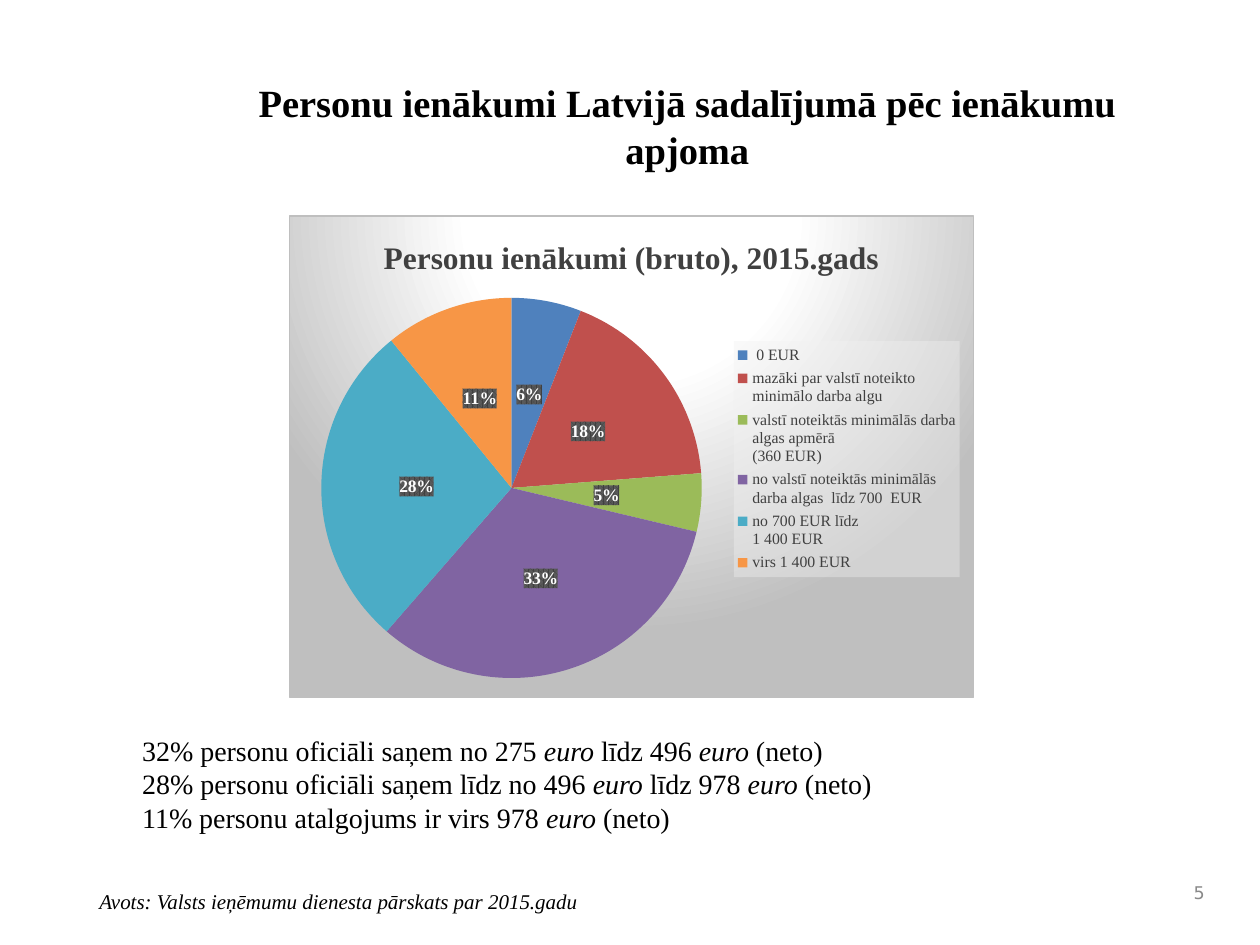
from dataclasses import dataclass

import pptx
import pptx.chart.data
import pptx.dml.color
import pptx.enum.chart
import pptx.enum.text
import pptx.oxml
import pptx.oxml.ns
import pptx.util

Inches = pptx.util.Inches
Align = pptx.enum.text.PP_ALIGN
Anchor = pptx.enum.text.MSO_ANCHOR
NS = pptx.oxml.ns.nsdecls("a", "c")


@dataclass
class Theme:
    font: str = "Times New Roman"
    plain: str = "DejaVu Sans"
    ink: str = "000000"
    white: str = "FFFFFF"
    soft: str = "404040"
    mid: str = "595959"
    grey: str = "BFBFBF"
    pale: str = "F2F2F2"
    num: str = "898989"
    slices: tuple = ("4F81BD", "C0504D", "9BBB59", "8064A2", "4BACC6", "F79646")
    head: int = 22
    sub: int = 18
    body: int = 16
    note: int = 12
    small: int = 10
    key: int = 9


T = Theme()

DATA = [
    (" 0 EUR", 6),
    ("mazāki par valstī noteikto minimālo darba algu", 18),
    ("valstī noteiktās minimālās darba algas apmērā\n(360 EUR)", 5),
    ("no valstī noteiktās minimālās darba algas  līdz 700  EUR", 33),
    ("no 700 EUR līdz \n1 400 EUR", 28),
    ("virs 1 400 EUR", 11),
]
# Every second piece of a line is italic
FACTS = [
    ("32% personu oficiāli saņem no 275 ", "euro", " līdz 496 ", "euro", " (neto)"),
    ("28% personu oficiāli saņem līdz no 496 ", "euro", " līdz 978 ", "euro", " (neto)"),
    ("11% personu atalgojums ir virs 978 ", "euro", " (neto)"),
]


def style(font, size, color=T.ink, name=T.font, bold=False, italic=False):
    font.name, font.size = name, pptx.util.Pt(size)
    font.bold, font.italic = bold, italic
    font.color.rgb = pptx.dml.color.RGBColor.from_string(color)


def write(shape, lines, size, align=Align.LEFT, anchor=Anchor.TOP, italic=False, **look):
    """Fill a shape with lines, each a tuple of alternating upright and italic pieces."""
    frame = shape.text_frame
    frame.word_wrap, frame.vertical_anchor = True, anchor
    frame.auto_size = pptx.enum.text.MSO_AUTO_SIZE.NONE
    for i, line in enumerate(lines):
        para = frame.paragraphs[0] if i == 0 else frame.add_paragraph()
        para.alignment = align
        for j, piece in enumerate(line):
            run = para.add_run()
            run.text = piece
            style(run.font, size, italic=italic or j % 2 == 1, **look)


def place(slide, box, lines, size, **look):
    write(slide.shapes.add_textbox(*map(Inches, box)), lines, size, **look)


def title(slide, box, text):
    shape = slide.shapes.title
    shape.left, shape.top, shape.width, shape.height = map(Inches, box)
    write(shape, [(text,)], T.head, align=Align.CENTER, bold=True)


def paint(after, fill, line="<a:ln><a:noFill/></a:ln>"):
    """Add shape properties right after a chart element."""
    after.addnext(pptx.oxml.parse_xml(f"<c:spPr {NS}>{fill}{line}</c:spPr>"))


def layout(host, index, x, y, w, h, inner=False):
    """Set a manual layout as fractions of the chart."""
    for old in host.findall(pptx.oxml.ns.qn("c:layout")):
        host.remove(old)
    target = '<c:layoutTarget val="inner"/>' if inner else ""
    modes = '<c:xMode val="edge"/><c:yMode val="edge"/>'
    spots = "".join(f'<c:{k} val="{v}"/>' for k, v in zip("xywh", (x, y, w, h)))
    host.insert(index, pptx.oxml.parse_xml(
        f"<c:layout {NS}><c:manualLayout>{target}{modes}{spots}"
        "</c:manualLayout></c:layout>"))


def rgb(color, inner=""):
    return f'<a:srgbClr val="{color}">{inner}</a:srgbClr>'


def pie(slide, box, text):
    data = pptx.chart.data.CategoryChartData(number_format="0")
    data.categories = [name for name, _ in DATA]
    data.add_series("Series 1", [value for _, value in DATA])
    chart = slide.shapes.add_chart(
        pptx.enum.chart.XL_CHART_TYPE.PIE, *map(Inches, box), data).chart
    style(chart.font, T.small)
    qn = pptx.oxml.ns.qn

    # Heading
    chart.has_title = True
    run = chart.chart_title.text_frame.paragraphs[0].add_run()
    run.text = text
    style(run.font, T.sub, T.soft, bold=True)
    chart.chart_title.include_in_layout = False

    # Slices and percent labels
    plot = chart.plots[0]
    plot.vary_by_categories = True
    series = plot.series[0]
    for i, color in enumerate(T.slices):
        fill = series.points[i].format.fill
        fill.solid()
        fill.fore_color.rgb = pptx.dml.color.RGBColor.from_string(color)
    labels = series.data_labels
    labels.show_percentage, labels.show_value = True, False
    labels.number_format, labels.number_format_is_linked = "0%", False
    labels.position = pptx.enum.chart.XL_LABEL_POSITION.CENTER
    style(labels.font, T.small, T.white, bold=True)
    node = chart.element.find(f".//{qn('c:ser')}/{qn('c:dLbls')}")
    paint(node.find(qn("c:numFmt")),
          f'<a:pattFill prst="pct75"><a:fgClr>{rgb(T.soft)}</a:fgClr>'
          f"<a:bgClr>{rgb(T.mid)}</a:bgClr></a:pattFill>")
    layout(chart.element.find(f".//{qn('c:plotArea')}"), 0, 0.04, 0.17, 0.57, 0.79, True)

    # Legend
    chart.has_legend = True
    key = chart.legend
    key.position = pptx.enum.chart.XL_LEGEND_POSITION.RIGHT
    key.include_in_layout = False
    style(key.font, T.key, T.soft)
    node = chart.element.find(f".//{qn('c:legend')}")
    layout(node, 1, 0.65, 0.26, 0.33, 0.49)
    alpha = '<a:alpha val="39000"/>'
    paint(node.find(qn("c:overlay")), f"<a:solidFill>{rgb(T.pale, alpha)}</a:solidFill>")

    # Radial backdrop
    stops = "".join(f'<a:gs pos="{at * 1000}">{rgb(color)}</a:gs>'
                    for at, color in ((0, T.white), (39, T.white), (100, T.grey)))
    paint(chart.element.find(qn("c:chart")),
          f'<a:gradFill><a:gsLst>{stops}</a:gsLst><a:path path="circle">'
          '<a:fillToRect l="50000" t="-80000" r="50000" b="180000"/></a:path></a:gradFill>',
          f'<a:ln w="9525"><a:solidFill>{rgb(T.grey)}</a:solidFill></a:ln>')


def main():
    deck = pptx.Presentation()
    deck.slide_width, deck.slide_height = Inches(10), Inches(7.5)
    slide = deck.slides.add_slide(deck.slide_layouts[5])
    title(slide, (1.72, 0.58, 7.47, 1.13),
          "Personu ienākumi Latvijā sadalījumā pēc ienākumu apjoma")
    pie(slide, (2.29, 1.71, 5.44, 3.83), "Personu ienākumi (bruto), 2015.gads")
    # Findings, source and page number
    place(slide, (1.03, 5.77, 7.95, 0.91), FACTS, T.body)
    place(slide, (0.69, 7, 8.27, 0.3),
          [("Avots: Valsts ieņēmumu dienesta pārskats par 2015.gadu",)], T.note, italic=True)
    place(slide, (9.19, 6.92, 0.47, 0.33), [("5",)], T.small, align=Align.RIGHT,
          anchor=Anchor.MIDDLE, color=T.num, name=T.plain)
    deck.save("out.pptx")


if __name__ == "__main__":
    main()
